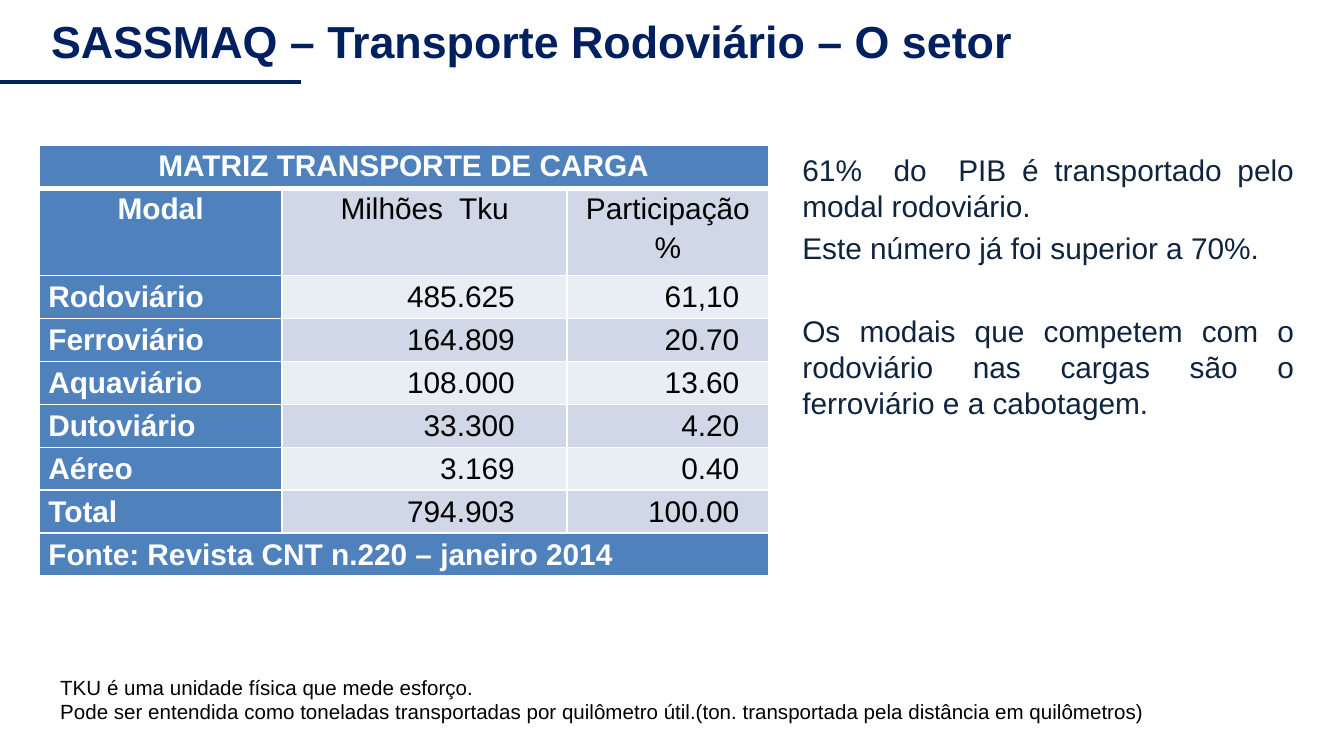
from lxml import etree
from pptx import Presentation
from pptx.dml.color import RGBColor
from pptx.enum.shapes import MSO_CONNECTOR
from pptx.enum.text import MSO_ANCHOR, MSO_AUTO_SIZE, PP_ALIGN
from pptx.oxml.ns import qn
from pptx.util import Inches, Pt

COLORS = {
    "navy": "002060",
    "ink": "0F243E",
    "black": "000000",
    "white": "FFFFFF",
    "blue": "4F81BD",
    "band_dark": "D0D8E8",
    "band_light": "E9EDF4",
}
FONT = "Arial"
PAGE_WIDTH = 10
PAGE_HEIGHT = PAGE_WIDTH * 9 / 16

TABLE_TITLE = "MATRIZ TRANSPORTE DE CARGA"
TABLE_SOURCE = "Fonte: Revista CNT n.220 – janeiro 2014"
HEADINGS = ("Modal", "Milhões  Tku", "Participação %")
MODES = [
    ("Rodoviário", "485.625", "61,10"),
    ("Ferroviário", "164.809", "20.70"),
    ("Aquaviário", "108.000", "13.60"),
    ("Dutoviário", "33.300", "4.20"),
    ("Aéreo", "3.169", "0.40"),
    ("Total", "794.903", "100.00"),
]
COLUMN_WIDTHS = (1.81, 2.12, 1.5)
NUMBER_MARGINS = (0.07, 0.39, 0.22)  # right margin of each column's values
ROW_HEIGHT, HEADING_HEIGHT = 0.32, 0.65

# Text and space before, in points
REMARKS = [
    ("61%  do  PIB é transportado pelo modal rodoviário.", 0),
    ("Este número já foi superior a 70%.", 3.2),
    ("Os modais que competem com o rodoviário nas cargas são o "
     "ferroviário e a cabotagem.", 25.5),
]
NOTES = [
    "TKU é uma unidade física que mede esforço.",
    "Pode ser entendida como toneladas transportadas por quilômetro útil."
    "(ton. transportada pela distância em quilômetros)",
]


def rgb(name):
    return RGBColor.from_string(COLORS[name])


def place(shape, left, top, width, height):
    shape.left, shape.top = Inches(left), Inches(top)
    shape.width, shape.height = Inches(width), Inches(height)


def add_span(para, text, size, color, bold=False):
    span = para.add_run()
    span.text = text
    span.font.name = FONT
    span.font.size = Pt(size)
    span.font.bold = bold
    span.font.color.rgb = rgb(color)


def paragraphs(frame, count):
    """Give the frame's first paragraph, then new ones up to count."""
    yield frame.paragraphs[0]
    for _ in range(count - 1):
        yield frame.add_paragraph()


def add_header(page, left, top, width, height):
    # Title
    title = page.shapes.title
    place(title, left, top, width, height)
    frame = title.text_frame
    frame.auto_size = MSO_AUTO_SIZE.NONE
    frame.vertical_anchor = MSO_ANCHOR.MIDDLE
    para = frame.paragraphs[0]
    para.alignment = PP_ALIGN.LEFT
    add_span(para, "SASSMAQ – Transporte Rodoviário – O setor", 24, "navy", True)

    # Rule below the title
    rule_y = Inches(top + height)
    rule = page.shapes.add_connector(
        MSO_CONNECTOR.STRAIGHT, Inches(-0.04), rule_y, Inches(2.24), rule_y)
    rule.line.color.rgb = rgb("navy")
    rule.line.width = Pt(2.25)
    etree.SubElement(rule._element.spPr, qn("a:effectLst"))


def set_borders(cell, bottom_width=1):
    props = cell._tc.get_or_add_tcPr()
    for side, width in (("L", 1), ("R", 1), ("T", 1), ("B", bottom_width)):
        border = etree.SubElement(props, qn(f"a:ln{side}"), w=str(Pt(width)))
        fill = etree.SubElement(border, qn("a:solidFill"))
        etree.SubElement(fill, qn("a:srgbClr"), val=COLORS["white"])


def add_cargo_table(page, left, top):
    rows = [(TABLE_TITLE, "", ""), HEADINGS, *MODES, (TABLE_SOURCE, "", "")]
    last = len(rows) - 1
    heights = [HEADING_HEIGHT if r == 1 else ROW_HEIGHT for r in range(len(rows))]
    table = page.shapes.add_table(
        len(rows), len(COLUMN_WIDTHS), Inches(left), Inches(top),
        Inches(sum(COLUMN_WIDTHS)), Inches(sum(heights))).table
    table.first_row = table.horz_banding = False
    for column, width in zip(table.columns, COLUMN_WIDTHS):
        column.width = Inches(width)

    for r, values in enumerate(rows):
        table.rows[r].height = Inches(heights[r])
        for c, value in enumerate(values):
            cell = table.cell(r, c)
            is_label = c == 0 or r in (0, last)
            is_number = 1 < r < last and c > 0
            set_borders(cell, 3 if r == 0 else 1)
            cell.fill.solid()
            band = "band_dark" if r % 2 else "band_light"
            cell.fill.fore_color.rgb = rgb("blue" if is_label else band)
            cell.margin_top = cell.margin_bottom = 0
            cell.margin_left = Inches(0.07)
            cell.margin_right = Inches(NUMBER_MARGINS[c] if is_number else 0.07)
            if not value:
                continue
            para = cell.text_frame.paragraphs[0]
            para.line_spacing = 1.15
            if r < 2:
                para.alignment = PP_ALIGN.CENTER
            else:
                para.alignment = PP_ALIGN.RIGHT if is_number else PP_ALIGN.LEFT
            add_span(para, value, 16, "white" if is_label else "black", is_label)

    # Title and source rows run across the table
    for r in (0, last):
        table.cell(r, 0).merge(table.cell(r, len(COLUMN_WIDTHS) - 1))


def add_remarks(page, left, top, width, height):
    body = page.placeholders[1]
    place(body, left, top, width, height)
    frame = body.text_frame
    frame.auto_size = MSO_AUTO_SIZE.SHAPE_TO_FIT_TEXT
    for para, (text, space) in zip(paragraphs(frame, len(REMARKS)), REMARKS):
        props = para._p.get_or_add_pPr()
        props.set("marL", "0")
        props.set("indent", "0")
        etree.SubElement(props, qn("a:buNone"))
        para.alignment = PP_ALIGN.JUSTIFY
        para.space_before = Pt(space)
        add_span(para, text, 16, "ink")


def add_notes_box(page, left, top, width, height):
    box = page.shapes.add_textbox(
        Inches(left), Inches(top), Inches(width), Inches(height))
    frame = box.text_frame
    frame.word_wrap = True
    frame.auto_size = MSO_AUTO_SIZE.SHAPE_TO_FIT_TEXT
    for para, text in zip(paragraphs(frame, len(NOTES)), NOTES):
        add_span(para, text, 11, "black")


def main():
    deck = Presentation()
    deck.slide_width, deck.slide_height = Inches(PAGE_WIDTH), Inches(PAGE_HEIGHT)
    page = deck.slides.add_slide(deck.slide_layouts[1])
    add_header(page, 0.28, 0, 7.72, 0.61)
    add_remarks(page, 5.87, 1.08, 3.86, 2.15)
    add_notes_box(page, 0.35, 4.97, 9.37, 0.47)
    add_cargo_table(page, 0.29, 1.08)
    deck.save("out.pptx")


if __name__ == "__main__":
    main()
